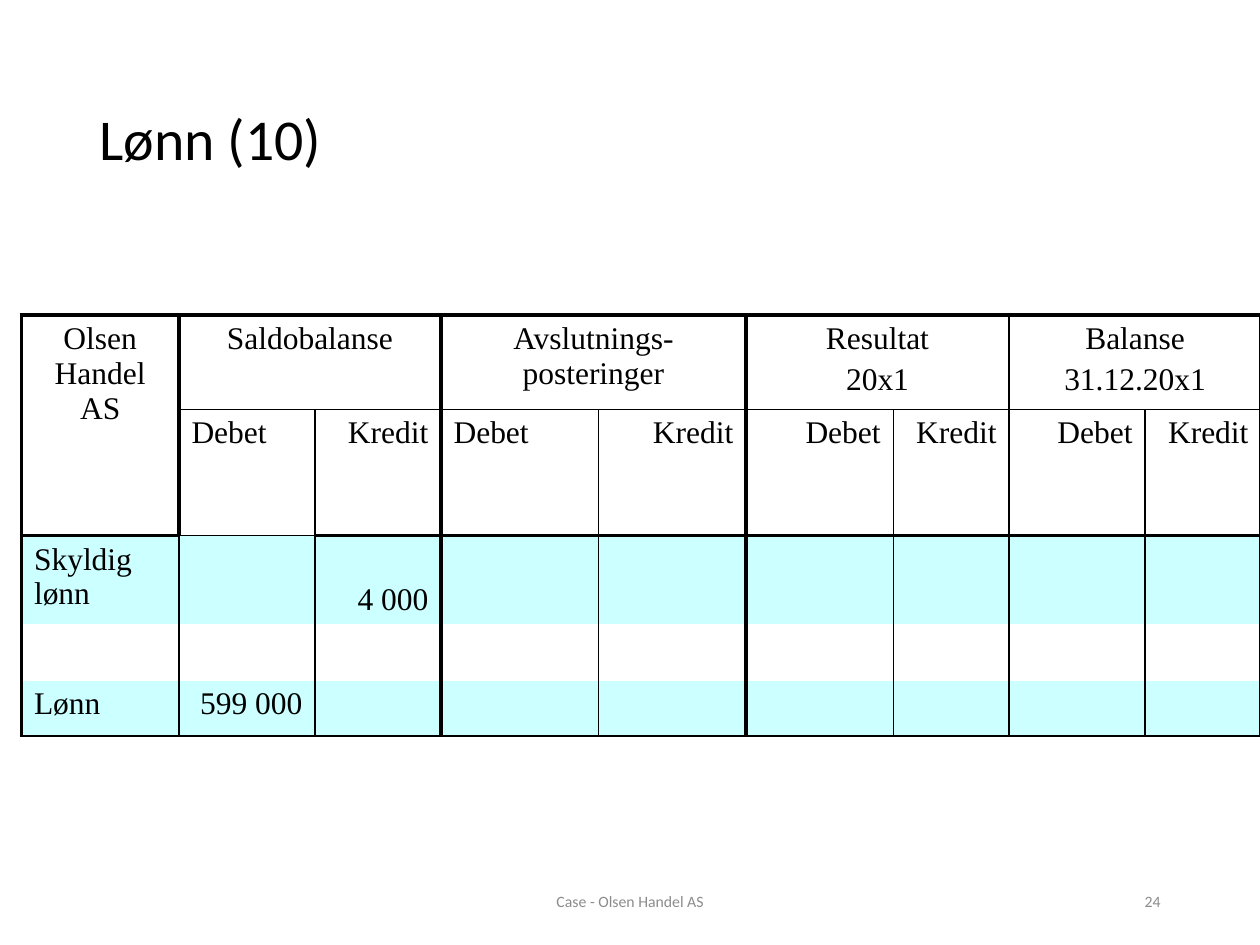
import pptx
import pptx.dml.color
import pptx.enum.text
import pptx.oxml
import pptx.oxml.ns
import pptx.util

ALIGN = pptx.enum.text.PP_ALIGN
ANCHOR = pptx.enum.text.MSO_ANCHOR
BLACK, GREY, CYAN = "000000", "8C8C8C", "CCFFFF"
THICK, THIN, NONE = 2.25, 1, 0

SLIDE_SIZE = (10, 7.5)
# text, (left, top, width, height), size, colour, alignment, line spacing
BOXES = [
    ("Lønn (10)", (0.69, 0.4, 8.62, 1.45), 33, BLACK, ALIGN.LEFT, 0.9),
    ("Case - Olsen Handel AS", (3.31, 6.95, 3.38, 0.4), 9, GREY, ALIGN.CENTER, 1),
    ("24", (7.06, 6.95, 2.25, 0.4), 9, GREY, ALIGN.RIGHT, 1),
]

TABLE_AT = (0.17, 2.5)
COLUMNS = [1.25, 1.08, 1, 1.25, 1.17, 1.17, 0.92, 1.08, 0.92]
ROWS = [0.7, 0.93, 0.7, 0.45, 0.44]
GROUPS = ["Saldobalanse", "Avslutnings-posteringer", "Resultat\n20x1", "Balanse\n31.12.20x1"]
BODY = [["Skyldig lønn", "", "4 000"], [], ["Lønn", "599 000"]]
FILLED_ROWS = (2, 4)
LEFT_ALIGNED = [(1, 1), (1, 3)]
ROW_LINES = [THICK, THIN, THICK, NONE, NONE, THIN]
THICK_COLUMN_LINES = (0, 3, 5, 9)


def rgb(colour):
    return pptx.dml.color.RGBColor.from_string(colour)


def write(frame, text, size, font, colour, align, **spacing):
    for number, line in enumerate(text.split("\n")):
        para = frame.add_paragraph() if number else frame.paragraphs[0]
        for name, value in {"alignment": align, **spacing}.items():
            setattr(para, name, value)
        span = para.add_run()
        span.text = line
        span.font.name, span.font.size = font, pptx.util.Pt(size)
        span.font.color.rgb = rgb(colour)


def column_line(row, edge):
    """Width of the vertical line at an edge; group headings span even edges."""
    if row == 0 and edge and edge % 2 == 0:
        return NONE
    if edge in THICK_COLUMN_LINES or (edge == 1 and row < 2):
        return THICK
    return THIN


def row_line(edge, column):
    """Width of the horizontal line at an edge; the corner cell spans edge 1."""
    special = {(1, 0): NONE, (2, 1): THIN}
    return special.get((edge, column), ROW_LINES[edge])


def set_borders(cell, widths):
    properties = cell._tc.get_or_add_tcPr()
    for side, width in widths.items():
        paint = f'<a:solidFill><a:srgbClr val="{BLACK}"/></a:solidFill>' if width else "<a:noFill/>"
        properties.append(pptx.oxml.parse_xml(
            f'<a:ln{side} {pptx.oxml.ns.nsdecls("a")} w="{pptx.util.Pt(width)}">{paint}</a:ln{side}>'))


def alignment(row, column):
    if row == 0:
        return ALIGN.CENTER
    return ALIGN.LEFT if column == 0 or (row, column) in LEFT_ALIGNED else ALIGN.RIGHT


def add_ledger(page):
    size = (sum(COLUMNS), sum(ROWS))
    table = page.shapes.add_table(
        len(ROWS), len(COLUMNS), *map(pptx.util.Inches, TABLE_AT + size)).table
    table.first_row = table.horz_banding = False
    for column, width in zip(table.columns, COLUMNS):
        column.width = pptx.util.Inches(width)
    for row, height in zip(table.rows, ROWS):
        row.height = pptx.util.Inches(height)

    headings = ["Olsen Handel AS"]
    for group in GROUPS:
        headings += [group, ""]
    content = [headings, [""] + ["Debet", "Kredit"] * len(GROUPS)] + BODY

    table.cell(0, 0).merge(table.cell(1, 0))
    for column in range(1, len(COLUMNS), 2):
        table.cell(0, column).merge(table.cell(0, column + 1))

    for r in range(len(ROWS)):
        for c in range(len(COLUMNS)):
            cell = table.cell(r, c)
            right, bottom = c + 1, r + 1
            if cell.is_merge_origin:
                right, bottom = c + cell.span_width, r + cell.span_height
            set_borders(cell, {"L": column_line(r, c), "R": column_line(r, right),
                               "T": row_line(r, c), "B": row_line(bottom, c)})
            if r in FILLED_ROWS:
                cell.fill.solid()
                cell.fill.fore_color.rgb = rgb(CYAN)
            else:
                cell.fill.background()
            text = content[r][c] if c < len(content[r]) else ""
            if text:
                write(cell.text_frame, text, 18, "Times New Roman", BLACK,
                      alignment(r, c), space_before=pptx.util.Pt(3.6))
    table.cell(2, 2).vertical_anchor = ANCHOR.BOTTOM


def main():
    deck = pptx.Presentation()
    deck.slide_width, deck.slide_height = map(pptx.util.Inches, SLIDE_SIZE)
    page = deck.slides.add_slide(deck.slide_layouts[6])
    for text, place, size, colour, align, leading in BOXES:
        frame = page.shapes.add_textbox(*map(pptx.util.Inches, place)).text_frame
        frame.word_wrap, frame.vertical_anchor = True, ANCHOR.MIDDLE
        write(frame, text, size, "Calibri", colour, align, line_spacing=leading)
    add_ledger(page)
    deck.save("out.pptx")


if __name__ == "__main__":
    main()
